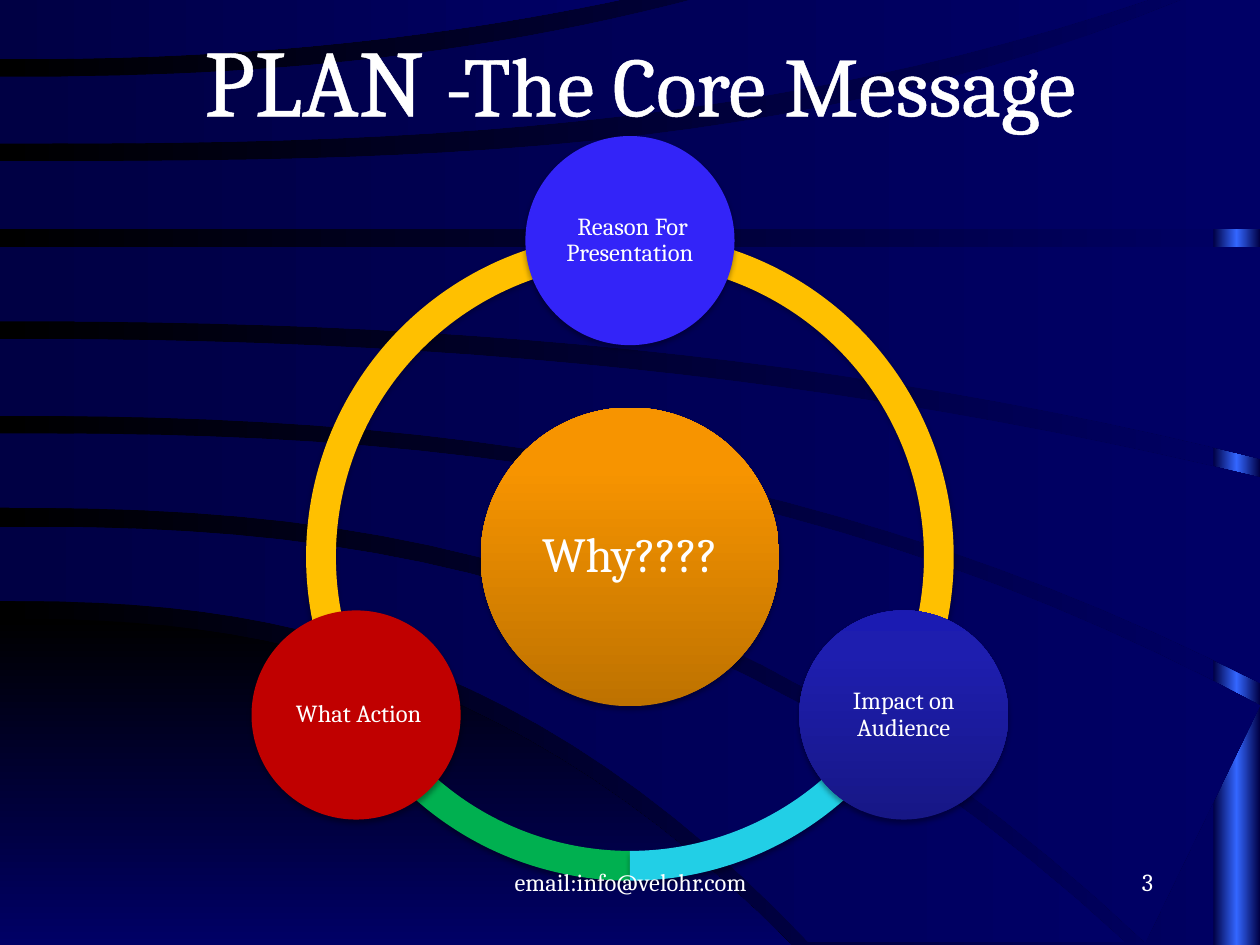
from copy import deepcopy
from math import cos, radians, sin

from lxml import etree
from pptx import Presentation
from pptx.dml.color import RGBColor
from pptx.enum.shapes import MSO_SHAPE
from pptx.enum.text import MSO_ANCHOR, MSO_AUTO_SIZE, PP_ALIGN
from pptx.oxml.ns import qn
from pptx.util import Inches, Pt

RECTANGLE, OVAL, BLOCK_ARC = MSO_SHAPE.RECTANGLE, MSO_SHAPE.OVAL, MSO_SHAPE.BLOCK_ARC
CENTER, RIGHT = PP_ALIGN.CENTER, PP_ALIGN.RIGHT
MIDDLE, NO_AUTOFIT = MSO_ANCHOR.MIDDLE, MSO_AUTO_SIZE.NONE

FONT = "Cambria"
WHITE = "FFFFFF"
NIGHT = [(0, "000000"), (1, "000066")]
BAND = [(0, "000044"), (1, "000066")]
GLOW = [(0, "000044"), (0.5, "3366FF"), (1, "000044")]
ORANGE = [(0, "BE7200"), (0.8, "F79400"), (1, "F89500")]
NAVY = [(0, "171786"), (0.8, "1E1EAF"), (1, "1B1BB2")]

HUB_X, HUB_Y = 5, 4.42
ORBIT, RING_SIZE, HUB_SIZE, NODE_SIZE = 2.51, 5.14, 2.37, 1.66
ARCS = [(90, 162, "00B050"), (18, 90, "22CFE6"), (162, 18, "FFC000")]
NODES = [
    (-90, " Reason For Presentation", "3324F8"),
    (30, "Impact on Audience", NAVY),
    (150, " What Action", "C00000"),
]

CURVE_STEPS = 24
CORNER = ((4.91, 6.28, 7.5, 2.45), (7.5, 6.28, 7.5, 1))
BANDS = [
    ((4.18, 8.93, 7.48, 2.5), (4.77, 6.42, 7.48, 2.5)),
    ((3.44, 10, 5.6, 2.5), (4.03, 9.09, 7.48, 2.5)),
    ((2.69, 10, 3.79, 2.2), (3.3, 10, 5.42, 2.4)),
    ((1.96, 10, 1.96, 1), (2.55, 10, 3.64, 2.3)),
    ((1.28, 9.43, -0.02, 3), (1.82, 10, 1.82, 1)),
    ((0.61, 5.56, -0.02, 2.35), (1.14, 9.17, -0.02, 2.7)),
    ((-0.02, 5.01, -0.02, 1), (0.47, 5.01, -0.02, 2.2)),
]


def color(value):
    """Turn a hex string into a colour."""
    return RGBColor.from_string(value)


def fill_gradient(target, fill, stops, angle=0):
    """Fill a shape or slide with a linear gradient, turned counter-clockwise."""
    fill.gradient()
    fill.gradient_angle = angle
    stop_list = target.element.find(".//" + qn("a:gsLst"))
    for _ in stops[2:]:
        stop_list.append(deepcopy(stop_list[-1]))
    for stop, (position, value) in zip(fill.gradient_stops, stops):
        stop.position = position
        stop.color.rgb = color(value)


def paint(shape, paint_value, angle=0):
    """Give a shape a flat or gradient fill with no line or shadow."""
    shape.shadow.inherit = False
    shape.line.fill.background()
    if isinstance(paint_value, str):
        shape.fill.solid()
        shape.fill.fore_color.rgb = color(paint_value)
    else:
        fill_gradient(shape, shape.fill, paint_value, angle)


def trace_edge(start_y, end_x, end_y, power):
    """List the points of an edge that leaves the left side level and then bends."""
    shares = [step / CURVE_STEPS for step in range(CURVE_STEPS + 1)]
    return [(Inches(end_x * share), Inches(start_y + (end_y - start_y) * share ** power))
            for share in shares]


def add_band(slide, upper, lower, stops, angle=0):
    """Draw the area between an upper and a lower edge."""
    far_corner = (Inches(max(upper[1], lower[1])), Inches(upper[2]))
    points = trace_edge(*upper) + [far_corner] + trace_edge(*lower)[::-1]
    builder = slide.shapes.build_freeform(*points[0])
    builder.add_line_segments(points[1:], close=True)
    paint(builder.convert_to_shape(), stops, angle)


def add_round(slide, kind, center, size, paint_value):
    """Add a shadowed shape of equal sides around a centre point."""
    left, top = (Inches(middle - size / 2) for middle in center)
    shape = slide.shapes.add_shape(kind, left, top, Inches(size), Inches(size))
    paint(shape, paint_value, 90)
    effects = shape.element.spPr.find(qn("a:effectLst"))
    shadow = etree.SubElement(effects, qn("a:outerShdw"), blurRad=str(Pt(3.1)),
                              dist=str(Pt(1.8)), dir="5400000", rotWithShape="0")
    shade = etree.SubElement(shadow, qn("a:srgbClr"), val="000000")
    etree.SubElement(shade, qn("a:alpha"), val="35000")
    return shape


def write(frame, text, size, align=CENTER):
    """Write one white paragraph into a text frame."""
    frame.word_wrap = True
    para = frame.paragraphs[0]
    para.text = text
    para.alignment = align
    para.font.name, para.font.size = FONT, Pt(size)
    para.font.color.rgb = color(WHITE)
    return para


def add_disc(slide, center, diameter, text, size, inset, paint_value):
    """Add a circle with a centred label."""
    frame = add_round(slide, OVAL, center, diameter, paint_value).text_frame
    frame.margin_left = frame.margin_right = Inches(inset)
    frame.margin_top = frame.margin_bottom = Inches(inset)
    frame.vertical_anchor = MIDDLE
    write(frame, text, size).line_spacing = 0.9


def add_backdrop(slide):
    """Lay the night gradient, the glowing edge and the curved bands."""
    fill_gradient(slide, slide.background.fill, NIGHT)
    edge = slide.shapes.add_shape(RECTANGLE, Inches(9.63), 0, Inches(0.37), Inches(7.5))
    paint(edge, GLOW)
    add_band(slide, *CORNER, NIGHT, 270)
    for upper, lower in BANDS:
        add_band(slide, upper, lower, BAND)


def add_title(slide):
    """Place the two-size title in front of the backdrop."""
    title = slide.shapes.title
    title.left, title.top = Inches(0.58), 0
    title.width, title.height = Inches(9), Inches(1.25)
    title.element.getparent().append(title.element)
    frame = title.text_frame
    frame.auto_size, frame.vertical_anchor = NO_AUTOFIT, MIDDLE
    para = write(frame, "PLAN ", 54)
    para.space_before = Pt(11)
    para.add_run().text = "-The Core Message"
    para.runs[1].font.size = Pt(48)
    for span in para.runs:
        line = etree.Element(qn("a:ln"), w=str(Pt(1.45)))
        solid = etree.SubElement(line, qn("a:solidFill"))
        etree.SubElement(solid, qn("a:srgbClr"), val=WHITE)
        span.font._element.insert(0, line)


def add_cycle(slide):
    """Draw the ring, its hub and the three discs on it."""
    hub = (HUB_X, HUB_Y)
    for start, end, value in ARCS:
        arc = add_round(slide, BLOCK_ARC, hub, RING_SIZE, value)
        for index, amount in enumerate((start * 0.6, end * 0.6, 0.046)):
            arc.adjustments[index] = amount
    add_disc(slide, hub, HUB_SIZE, "Why????", 28, 0.04, ORANGE)
    for angle, text, value in NODES:
        turn = radians(angle)
        center = (HUB_X + ORBIT * cos(turn), HUB_Y + ORBIT * sin(turn))
        add_disc(slide, center, NODE_SIZE, text, 14, 0.02, value)


def add_footer(slide, left, width, text, align):
    """Add a text box on the footer line."""
    box = slide.shapes.add_textbox(Inches(left), Inches(6.83), Inches(width), Inches(0.5))
    write(box.text_frame, text, 14, align)


def main():
    """Build the slide and save the deck."""
    deck = Presentation()
    deck.slide_width, deck.slide_height = Inches(10), Inches(7.5)
    slide = deck.slides.add_slide(deck.slide_layouts[5])
    add_backdrop(slide)
    add_title(slide)
    add_cycle(slide)
    add_footer(slide, 3.42, 3.17, "email:info@velohr.com", CENTER)
    add_footer(slide, 7.17, 2.08, "3", RIGHT)
    deck.save("out.pptx")


if __name__ == "__main__":
    main()
